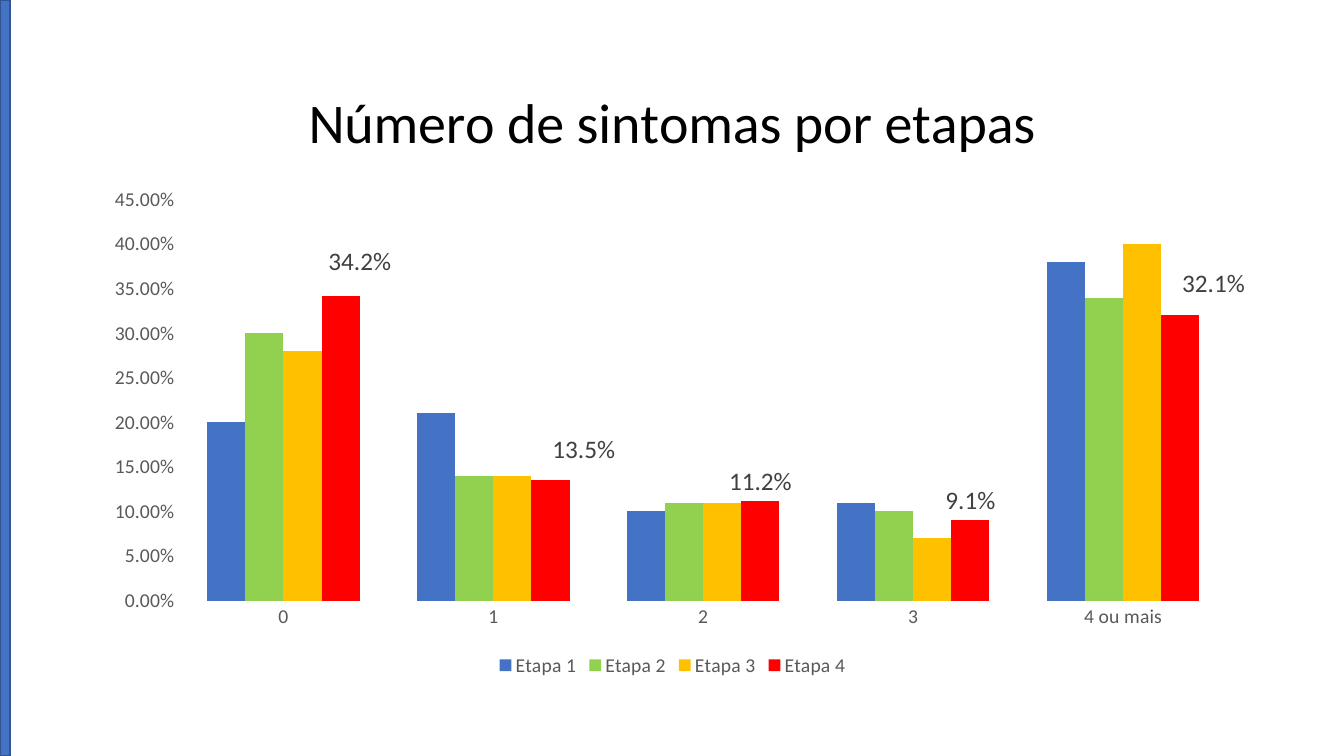
from lxml import etree
from pptx import Presentation
from pptx.chart.data import CategoryChartData
from pptx.dml.color import RGBColor
from pptx.enum.chart import (XL_CHART_TYPE as ChartType, XL_LABEL_POSITION as LabelPosition,
                             XL_LEGEND_POSITION as LegendPosition, XL_TICK_MARK as TickMark)
from pptx.enum.shapes import MSO_SHAPE as Preset
from pptx.oxml.ns import qn
from pptx.util import Inches, Pt

TITLE = "Número de sintomas por etapas"
CATEGORIES = ["0", "1", "2", "3", "4 ou mais"]
STAGES = [
    ("Etapa 1", "4472C4", [0.2, 0.21, 0.1, 0.11, 0.38]),
    ("Etapa 2", "92D050", [0.3, 0.14, 0.11, 0.1, 0.34]),
    ("Etapa 3", "FFC000", [0.28, 0.14, 0.11, 0.07, 0.4]),
    ("Etapa 4", "FF0000", [0.342, 0.135, 0.112, 0.091, 0.321]),
]
LABEL_OFFSETS = {0: (0.19, -0.15), 1: (0.33, -0.12), 4: (0.33, -0.12)}
LABEL_FORMAT = "0.0%"
AXIS_FORMAT = "0.00%"
CHART_WIDTH = 11.5
CHART_HEIGHT = 6.19


def color(hex_text):
    return RGBColor.from_string(hex_text)


def manual_layout(x, y, **settings):
    values = {**settings, "x": x / CHART_WIDTH, "y": y / CHART_HEIGHT}
    return layout_element(values)


def layout_element(values):
    layout = etree.Element(qn("c:layout"))
    manual = etree.SubElement(layout, qn("c:manualLayout"))
    for name in ("layoutTarget", "xMode", "yMode", "x", "y", "w", "h"):
        if name in values:
            etree.SubElement(manual, qn(f"c:{name}")).set("val", str(values[name]))
    return layout


def remove_layouts(element):
    for layout in element.findall(qn("c:layout")):
        element.remove(layout)


class SlideBuilder:
    font_name = "Calibri"
    text_color = "595959"
    label_color = "404040"
    title_color = "000000"

    def __init__(self, presentation):
        self.slide = presentation.slides.add_slide(presentation.slide_layouts[6])

    def style_font(self, font, size, hex_text):
        font.name = self.font_name
        font.size = Pt(size)
        font.bold = False
        font.color.rgb = color(hex_text)

    def rectangle(self, left, top, width, height, fill, line):
        shape = self.slide.shapes.add_shape(
            Preset.RECTANGLE, Inches(left), Inches(top), Inches(width), Inches(height))
        shape.shadow.inherit = False
        shape.fill.solid()
        shape.fill.fore_color.rgb = color(fill)
        shape.line.color.rgb = color(line)
        shape.line.width = Pt(1)

    def column_chart(self, left, top):
        data = CategoryChartData(number_format=AXIS_FORMAT)
        data.categories = CATEGORIES
        for name, _, values in STAGES:
            data.add_series(name, values)
        chart = self.slide.shapes.add_chart(
            ChartType.COLUMN_CLUSTERED, Inches(left), Inches(top),
            Inches(CHART_WIDTH), Inches(CHART_HEIGHT), data).chart
        self.style_font(chart.font, 10, self.title_color)
        self.chart_title(chart)
        self.axes(chart)
        self.legend(chart)
        self.columns(chart)
        self.value_labels(chart)

    def chart_title(self, chart):
        chart.has_title = True
        title = chart.chart_title
        run = title.text_frame.paragraphs[0].add_run()
        run.text = TITLE
        self.style_font(run.font, 40, self.title_color)
        element = chart.element.find(f".//{qn('c:title')}")
        remove_layouts(element)
        element.find(qn("c:tx")).addnext(
            manual_layout(2.04, 0.17, xMode="edge", yMode="edge"))

    def axes(self, chart):
        for axis in (chart.category_axis, chart.value_axis):
            axis.has_major_gridlines = False
            axis.major_tick_mark = TickMark.NONE
            axis.minor_tick_mark = TickMark.NONE
            axis.format.line.fill.background()
            self.style_font(axis.tick_labels.font, 14, self.text_color)
        value_axis = chart.value_axis
        value_axis.minimum_scale = 0
        value_axis.maximum_scale = 0.45
        value_axis.major_unit = 0.05
        value_axis.tick_labels.number_format = AXIS_FORMAT
        value_axis.tick_labels.number_format_is_linked = False

    def legend(self, chart):
        chart.has_legend = True
        chart.legend.position = LegendPosition.BOTTOM
        chart.legend.include_in_layout = False
        self.style_font(chart.legend.font, 14, self.text_color)

    def columns(self, chart):
        plot = chart.plots[0]
        plot.gap_width = 150
        plot.overlap = 0
        plot.vary_by_categories = False
        for series, (_, fill, _) in zip(plot.series, STAGES):
            series.format.fill.solid()
            series.format.fill.fore_color.rgb = color(fill)
        plot_area = chart.element.find(f".//{qn('c:plotArea')}")
        remove_layouts(plot_area)
        plot_area.insert(0, manual_layout(
            0.85, 1.41, layoutTarget="inner", xMode="edge", yMode="edge",
            w=10.41 / CHART_WIDTH, h=3.98 / CHART_HEIGHT))

    def value_labels(self, chart):
        series = chart.plots[0].series[len(STAGES) - 1]
        labels = series.data_labels
        labels.show_value = True
        labels.number_format = LABEL_FORMAT
        labels.number_format_is_linked = False
        labels.position = LabelPosition.OUTSIDE_END
        self.style_font(labels.font, 18, self.label_color)
        for index in LABEL_OFFSETS:
            label = series.points[index].data_label
            label.position = LabelPosition.OUTSIDE_END
            self.style_font(label.font, 18, self.label_color)
        elements = chart.element.findall(f".//{qn('c:dLbl')}")
        for element, (x, y) in zip(elements, LABEL_OFFSETS.values()):
            layout = manual_layout(x, y)
            element.find(qn("c:idx")).addnext(layout)
            layout.addnext(etree.Element(
                qn("c:numFmt"), formatCode=LABEL_FORMAT, sourceLinked="0"))
        for leader_lines in chart.element.iter(qn("c:showLeaderLines")):
            leader_lines.set("val", "0")


def main():
    presentation = Presentation()
    presentation.slide_width = Inches(13.33)
    presentation.slide_height = Inches(7.5)
    builder = SlideBuilder(presentation)
    builder.column_chart(0.92, 0.57)
    builder.rectangle(0, 0, 0.1, 7.5, "4472C4", "325491")
    presentation.save("out.pptx")


if __name__ == "__main__":
    main()
